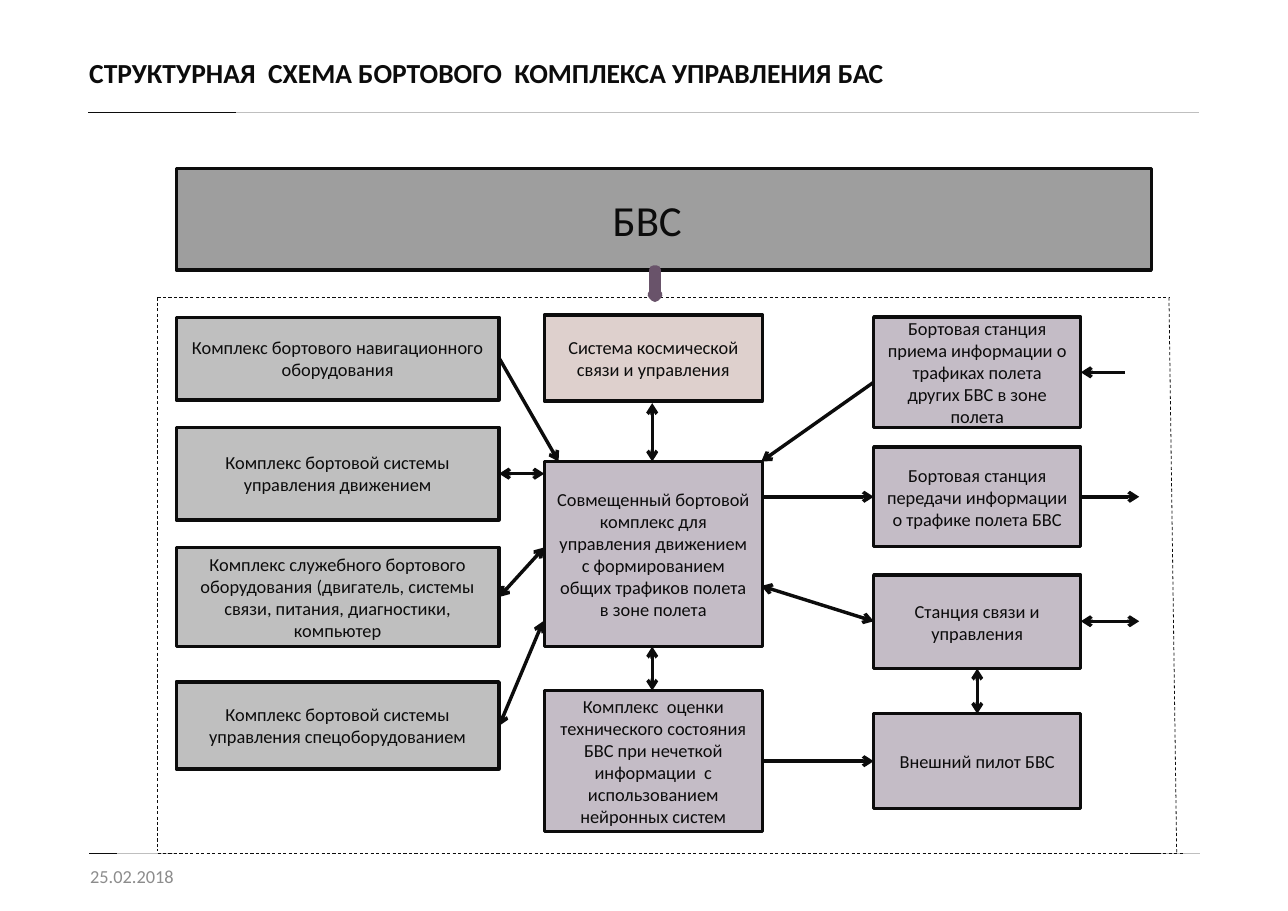
import pptx
import pptx.dml.color
import pptx.enum.dml
import pptx.enum.shapes
import pptx.enum.text
import pptx.oxml
import pptx.oxml.ns
import pptx.util

Inches = pptx.util.Inches
RGBColor = pptx.dml.color.RGBColor
SHAPES = pptx.enum.shapes.MSO_SHAPE
ALIGN = pptx.enum.text.PP_ALIGN

INK = RGBColor(0x0C, 0x0C, 0x0C)
RULE = RGBColor(0xBF, 0xBF, 0xBF)
DATE = RGBColor(0x8C, 0x8C, 0x8C)
ONBOARD = RGBColor(0xBF, 0xBF, 0xBF)
CONTROL = RGBColor(0xC4, 0xBC, 0xC6)
SPACE = RGBColor(0xDE, 0xD0, 0xCD)
AIRCRAFT = RGBColor(0x9E, 0x9E, 0x9E)
PLUM = RGBColor(0x69, 0x53, 0x6A)


def write(shape, text, size=12, color=INK, bold=False, align=ALIGN.CENTER, spacing=1.0):
    frame = shape.text_frame
    frame.word_wrap = True
    frame.auto_size = pptx.enum.text.MSO_AUTO_SIZE.NONE
    frame.vertical_anchor = pptx.enum.text.MSO_ANCHOR.MIDDLE
    para = frame.paragraphs[0]
    para.alignment = align
    para.line_spacing = spacing
    span = para.add_run()
    span.text = text
    span.font.name = "Calibri"
    span.font.size = pptx.util.Pt(size)
    span.font.bold = bold
    span.font.color.rgb = color


def connect(start, end, color=INK, width=0.5, dashed=False, arrows=()):
    """Draw a straight line; arrows may hold "headEnd" (start) and "tailEnd" (end)."""
    x1, y1 = start
    x2, y2 = end
    link = page.shapes.add_connector(
        pptx.enum.shapes.MSO_CONNECTOR.STRAIGHT,
        Inches(x1), Inches(y1), Inches(x2), Inches(y2))
    link.line.color.rgb = color
    link.line.width = pptx.util.Pt(width)
    if dashed:
        link.line.dash_style = pptx.enum.dml.MSO_LINE.DASH
    properties = link._element.spPr
    outline = properties.find(pptx.oxml.ns.qn("a:ln"))
    for arrow in arrows:
        tip = pptx.oxml.parse_xml(f'<a:{arrow} {pptx.oxml.ns.nsdecls("a")} type="arrow"/>')
        outline.append(tip)
    properties.append(pptx.oxml.parse_xml(f'<a:effectLst {pptx.oxml.ns.nsdecls("a")}/>'))


deck = pptx.Presentation()
deck.slide_width = Inches(11.69)
deck.slide_height = Inches(8.27)
page = deck.slides.add_slide(deck.slide_layouts[5])

# Title, date and their rules
for left, right, dark_end, y in [
    (0.8, 10.88, 2.14, 1.02),
    (10.29, 10.89, 10.54, 7.75),
    (0.81, 1.61, 1.06, 7.75),
]:
    connect((left, y), (right, y), color=RULE)
    connect((left, y), (dark_end, y))

title = page.shapes.title
title.left, title.top = Inches(0.71), Inches(0.28)
title.width, title.height = Inches(7.97), Inches(0.8)
write(title, "СТРУКТУРНАЯ  СХЕМА БОРТОВОГО  КОМПЛЕКСА УПРАВЛЕНИЯ БАС",
      size=18, bold=True, align=ALIGN.LEFT, spacing=0.9)

date = page.shapes.add_textbox(Inches(0.72), Inches(7.73), Inches(2.63), Inches(0.44))
write(date, "25.02.2018", color=DATE, align=ALIGN.LEFT)

# Blocks: each column shares left edge and width
columns = [
    (1.6, 2.93, [
        (2.88, 0.75, ONBOARD, "Комплекс бортового навигационного оборудования"),
        (3.88, 0.84, ONBOARD, "Комплекс бортовой системы управления движением"),
        (4.97, 0.9, ONBOARD, "Комплекс служебного бортового оборудования "
                             "(двигатель, системы связи, питания, диагностики, компьютер"),
        (6.19, 0.79, ONBOARD, "Комплекс бортовой системы управления спецоборудованием"),
    ]),
    (4.94, 1.98, [
        (2.86, 0.78, SPACE, "Система космической связи и управления"),
        (4.19, 1.68, CONTROL, "Совмещенный бортовой комплекс для управления движением "
                              "с формированием общих трафиков полета в зоне полета"),
        (6.27, 1.28, CONTROL, "Комплекс  оценки технического состояния БВС при нечеткой "
                              "информации  с использованием нейронных систем"),
    ]),
    (7.93, 1.88, [
        (2.88, 1.0, CONTROL, "Бортовая станция приема информации о трафиках полета "
                             "других БВС в зоне полета"),
        (4.06, 0.9, CONTROL, "Бортовая станция передачи информации о трафике полета БВС"),
        (5.22, 0.85, CONTROL, "Станция связи и управления"),
        (6.48, 0.86, CONTROL, "Внешний пилот БВС"),
    ]),
    (1.6, 8.85, [(1.53, 0.92, AIRCRAFT, "БВС")]),
]
for left, width, blocks in columns:
    for top, height, fill, text in blocks:
        box = page.shapes.add_shape(
            SHAPES.RECTANGLE, Inches(left), Inches(top), Inches(width), Inches(height))
        box.shadow.inherit = False
        box.fill.solid()
        box.fill.fore_color.rgb = fill
        box.line.color.rgb = INK
        box.line.width = pptx.util.Pt(2.25)
        is_aircraft = fill == AIRCRAFT
        write(box, text, size=28 if is_aircraft else 12)
        if is_aircraft:
            box.text_frame.margin_right = Inches(0.4)

# Dashed border of the onboard complex
for start, end in [
    ((1.43, 2.7), (1.43, 7.73)),
    ((1.43, 2.7), (10.61, 2.7)),
    ((10.61, 2.7), (10.68, 7.75)),
    ((1.43, 7.75), (10.75, 7.75)),
]:
    connect(start, end, dashed=True)

down = page.shapes.add_shape(
    SHAPES.DOWN_ARROW, Inches(5.92), Inches(2.45), Inches(0.05), Inches(0.25))
down.shadow.inherit = False
down.fill.solid()
down.fill.fore_color.rgb = INK
down.line.color.rgb = PLUM
down.line.width = pptx.util.Pt(6)

# Data flows between blocks
one_way = [
    ((6.92, 6.91), (7.93, 6.91)),
    ((6.92, 4.51), (7.93, 4.51)),
    ((7.93, 3.47), (6.91, 4.19)),
    ((4.53, 3.25), (5.07, 4.19)),
    ((9.81, 4.51), (10.34, 4.51)),
    ((10.21, 3.38), (9.81, 3.38)),
]
two_way = [
    ((6.91, 5.32), (7.93, 5.64)),
    ((8.87, 6.07), (8.87, 6.48)),
    ((9.81, 5.64), (10.34, 5.64)),
    ((5.92, 5.87), (5.92, 6.27)),
    ((4.53, 4.3), (4.94, 4.3)),
    ((4.53, 5.42), (4.94, 4.97)),
    ((4.53, 6.59), (4.93, 5.64)),
    ((5.92, 4.19), (5.92, 3.66)),
]
for flows, arrows in [(one_way, ["tailEnd"]), (two_way, ["headEnd", "tailEnd"])]:
    for start, end in flows:
        connect(start, end, width=2.25, arrows=arrows)

deck.save("out.pptx")
